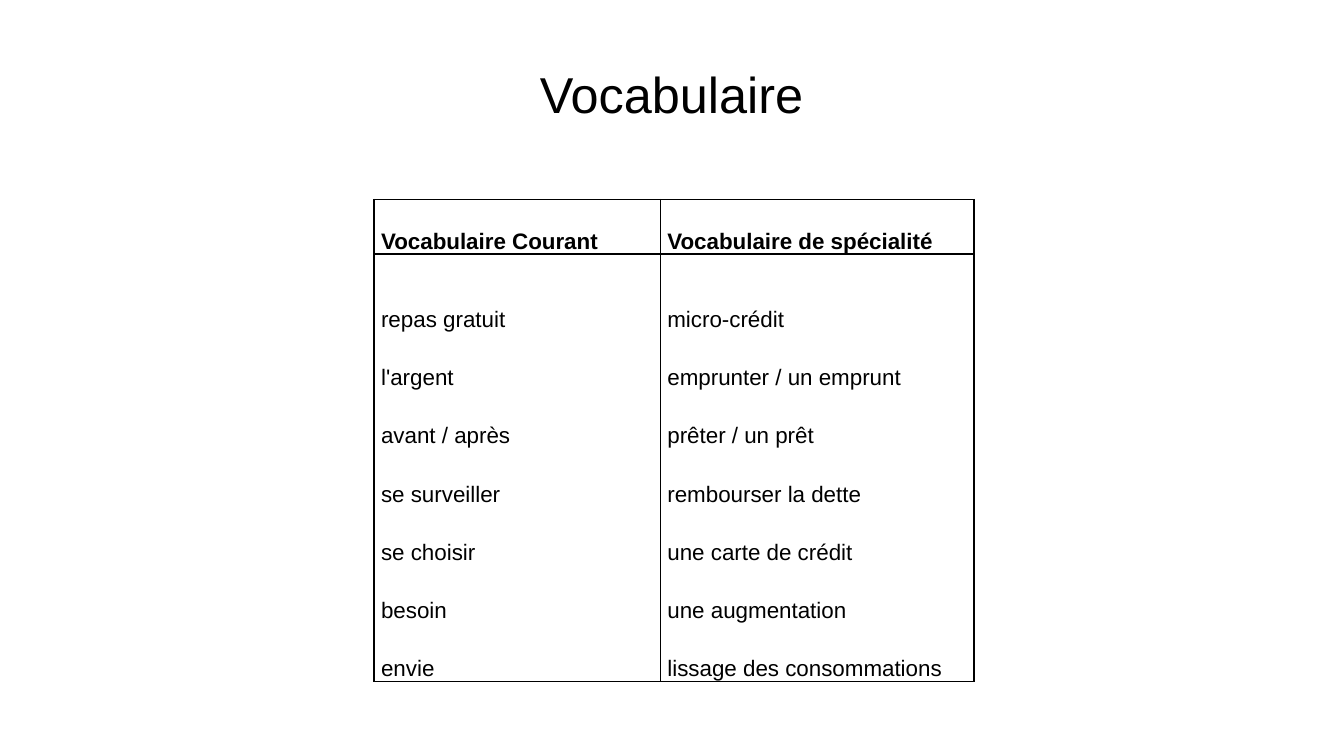
from lxml import etree
from pptx import Presentation
from pptx.dml.color import RGBColor
from pptx.enum.text import MSO_ANCHOR, PP_ALIGN
from pptx.oxml.ns import qn
from pptx.util import Inches, Pt

MIDDLE, BOTTOM = MSO_ANCHOR.MIDDLE, MSO_ANCHOR.BOTTOM
CENTER, LEFT = PP_ALIGN.CENTER, PP_ALIGN.LEFT
FONT = "Arial"
BLACK = "000000"
BORDER_WIDTH = Pt(1)
COLUMN_WIDTHS = (2.84, 3.11)
ROW_HEIGHTS = (0.54, 4.24)

VOCABULARY = {
    "Vocabulaire Courant": [
        "repas gratuit", "l'argent", "avant / après", "se surveiller",
        "se choisir", "besoin", "envie",
    ],
    "Vocabulaire de spécialité": [
        "micro-crédit", "emprunter / un emprunt", "prêter / un prêt",
        "rembourser la dette", "une carte de crédit", "une augmentation",
        "lissage des consommations",
    ],
}


def color(hex_value):
    return RGBColor.from_string(hex_value)


def write_lines(frame, lines, size, bold, align, spacing, before=0):
    for index, line in enumerate(lines):
        paragraph = frame.paragraphs[0] if index == 0 else frame.add_paragraph()
        paragraph.alignment = align
        paragraph.line_spacing = spacing
        paragraph.space_before = Pt(before)
        run = paragraph.add_run()
        run.text = line
        run.font.name = FONT
        run.font.size = Pt(size)
        run.font.bold = bold
        run.font.color.rgb = color(BLACK)


def add_borders(cell):
    properties = cell._tc.get_or_add_tcPr()
    for position, side in enumerate(("a:lnL", "a:lnR", "a:lnT", "a:lnB")):
        line = etree.Element(qn(side), w=str(BORDER_WIDTH))
        fill = etree.SubElement(line, qn("a:solidFill"))
        etree.SubElement(fill, qn("a:srgbClr"), val=BLACK)
        properties.insert(position, line)


def add_title(slide, left, top, width, height):
    title = slide.shapes.add_textbox(
        Inches(left), Inches(top), Inches(width), Inches(height))
    frame = title.text_frame
    frame.word_wrap = True
    frame.vertical_anchor = MIDDLE
    write_lines(frame, ["Vocabulaire"], 36, False, CENTER, 0.9)


def fill_cell(cell, lines, bold):
    cell.fill.background()
    cell.vertical_anchor = BOTTOM
    cell.margin_left = cell.margin_right = Inches(0.07)
    cell.margin_top = cell.margin_bottom = 0
    write_lines(cell.text_frame, lines, 16, bold, LEFT, 2.0, before=6)
    add_borders(cell)


def add_vocabulary_table(slide, left, top):
    table = slide.shapes.add_table(
        len(ROW_HEIGHTS), len(COLUMN_WIDTHS), Inches(left), Inches(top),
        Inches(sum(COLUMN_WIDTHS)), Inches(sum(ROW_HEIGHTS))).table
    table.first_row = table.horz_banding = False
    for row, height in zip(table.rows, ROW_HEIGHTS):
        row.height = Inches(height)
    for column, width in zip(table.columns, COLUMN_WIDTHS):
        column.width = Inches(width)

    # Heading above the list of terms, one column per vocabulary
    for index, (heading, terms) in enumerate(VOCABULARY.items()):
        fill_cell(table.cell(0, index), [heading], True)
        fill_cell(table.cell(1, index), terms, False)


def main():
    presentation = Presentation()
    presentation.slide_width = Inches(13.33)
    presentation.slide_height = Inches(7.5)
    slide = presentation.slides.add_slide(presentation.slide_layouts[6])
    add_title(slide, 0.92, 0.4, 11.48, 1.13)
    add_vocabulary_table(slide, 3.71, 1.98)
    presentation.save("out.pptx")


if __name__ == "__main__":
    main()
